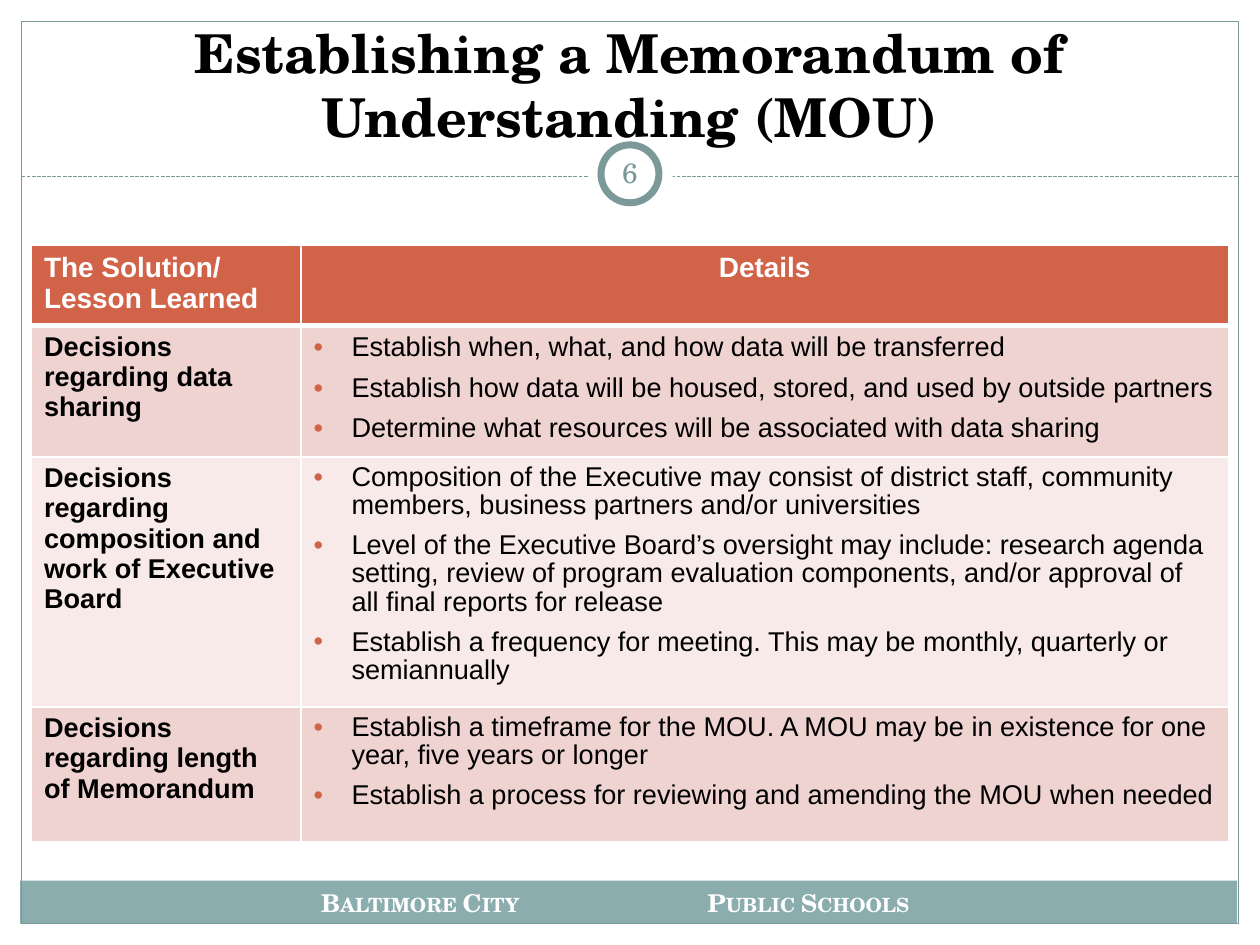
from lxml.etree import SubElement
from pptx import Presentation
from pptx.dml.color import RGBColor
from pptx.enum.dml import MSO_LINE
from pptx.enum.shapes import MSO_CONNECTOR, MSO_SHAPE
from pptx.enum.text import MSO_ANCHOR, PP_ALIGN
from pptx.oxml.ns import qn
from pptx.util import Inches, Pt

WHITE = RGBColor(0xFF, 0xFF, 0xFF)
BLACK = RGBColor(0, 0, 0)
TEAL = RGBColor(0x7C, 0x99, 0x9A)
NUMBER_TEAL = RGBColor(0x7B, 0x98, 0x99)
FOOTER_TEAL = RGBColor(0x8C, 0xAD, 0xAE)
ORANGE = RGBColor(0xD1, 0x63, 0x49)
PINK = RGBColor(0xEE, 0xD3, 0xD0)
PALE_PINK = RGBColor(0xF7, 0xEA, 0xE9)
SERIF = "TeX Gyre Schola"
SANS = "Arial"

TITLE = "Establishing a Memorandum of Understanding (MOU)"
PAGE_NUMBER = "6"
FOOTERS = [("Baltimore City", 2.42), ("Public Schools", 5.5)]
HEADERS = ["The Solution/ Lesson Learned", "Details"]
DECISIONS = [
    ("Decisions regarding data sharing", 1, [
        "Establish when, what, and how data will be transferred",
        "Establish how data will be housed, stored, and used by outside partners",
        "Determine what resources will be associated with data sharing",
    ]),
    ("Decisions regarding composition and work of Executive Board", 0.95, [
        "Composition of the Executive may consist of district staff, community members, "
        "business partners and/or universities",
        "Level of the Executive Board’s oversight may include: research agenda setting, "
        "review of program evaluation components, and/or approval of all final reports for release",
        "Establish a frequency for meeting. This may be monthly, quarterly or semiannually",
    ]),
    ("Decisions regarding length of Memorandum", 0.95, [
        "Establish a timeframe for the MOU. A MOU may be in existence for one year, "
        "five years or longer",
        "Establish a process for reviewing and amending the MOU when needed",
    ]),
]
COLUMN_WIDTHS = [2.14, 7.36]
ROW_HEIGHTS = [0.58, 0.99, 1.87, 1.07]


def add_panel(slide, kind, box, fill=None, line=None, width=0.75):
    shape = slide.shapes.add_shape(kind, *map(Inches, box))
    shape.shadow.inherit = False
    if fill is None:
        shape.fill.background()
    else:
        shape.fill.solid()
        shape.fill.fore_color.rgb = fill
    if line is None:
        shape.line.fill.background()
    else:
        shape.line.color.rgb = line
        shape.line.width = Pt(width)


def style(paragraph, name, size, color, bold):
    font = paragraph.font
    font.name, font.size, font.bold = name, Pt(size), bold
    font.color.rgb = color


def add_text(slide, text, box, size, color, bold=True, anchor=MSO_ANCHOR.MIDDLE, margin=0.1):
    frame = slide.shapes.add_textbox(*map(Inches, box)).text_frame
    frame.word_wrap = True
    frame.vertical_anchor = anchor
    frame.margin_left = frame.margin_right = Inches(margin)
    paragraph = frame.paragraphs[0]
    paragraph.alignment = PP_ALIGN.CENTER
    run = paragraph.add_run()
    run.text = text
    style(paragraph, SERIF, size, color, bold)
    return run


def add_bullet(paragraph):
    properties = paragraph._p.get_or_add_pPr()
    properties.set("marL", str(Inches(0.3)))
    properties.set("indent", str(Inches(-0.31)))
    color = SubElement(properties, qn("a:buClr"))
    SubElement(color, qn("a:srgbClr"), val=str(ORANGE))
    SubElement(properties, qn("a:buFont"), typeface=SANS)
    SubElement(properties, qn("a:buChar"), char="•")


def format_cell(cell, fill, bottom=1):
    properties = cell._tc.get_or_add_tcPr()
    for side, width in (("L", 1), ("R", 1), ("T", 1), ("B", bottom)):
        border = SubElement(properties, qn(f"a:ln{side}"), w=str(Pt(width)))
        solid = SubElement(border, qn("a:solidFill"))
        SubElement(solid, qn("a:srgbClr"), val=str(WHITE))
    cell.fill.solid()
    cell.fill.fore_color.rgb = fill


def add_frame(slide):
    add_panel(slide, MSO_SHAPE.RECTANGLE, (0.16, 6.99, 9.66, 0.34), FOOTER_TEAL)
    add_panel(slide, MSO_SHAPE.RECTANGLE, (0.17, 0.17, 9.66, 7.16), line=TEAL)
    divider = slide.shapes.add_connector(
        MSO_CONNECTOR.STRAIGHT, Inches(0.17), Inches(1.4), Inches(9.83), Inches(1.4))
    divider.line.color.rgb = TEAL
    divider.line.width = Pt(0.75)
    divider.line.dash_style = MSO_LINE.SQUARE_DOT
    SubElement(divider._element.spPr, qn("a:effectLst"))
    add_panel(slide, MSO_SHAPE.OVAL, (4.67, 1.05, 0.67, 0.67), WHITE)
    add_panel(slide, MSO_SHAPE.OVAL, (4.77, 1.15, 0.46, 0.46), WHITE, TEAL, 4)
    for text, left in FOOTERS:
        run = add_text(slide, text, (left, 7, 1.83, 0.29), 14, WHITE, anchor=MSO_ANCHOR.TOP)
        run._r.get_or_add_rPr().set("cap", "small")


def add_decision_table(slide):
    table = slide.shapes.add_table(
        len(ROW_HEIGHTS), len(COLUMN_WIDTHS), Inches(0.25), Inches(1.95),
        Inches(sum(COLUMN_WIDTHS)), Inches(sum(ROW_HEIGHTS))).table
    for column, width in zip(table.columns, COLUMN_WIDTHS):
        column.width = Inches(width)
    for row, height in zip(table.rows, ROW_HEIGHTS):
        row.height = Inches(height)

    for index, header in enumerate(HEADERS):
        cell = table.cell(0, index)
        format_cell(cell, ORANGE, bottom=3)
        cell.text = header
        paragraph = cell.text_frame.paragraphs[0]
        paragraph.alignment = PP_ALIGN.CENTER if index else PP_ALIGN.LEFT
        style(paragraph, SANS, 16, WHITE, True)

    for index, (topic, spacing, details) in enumerate(DECISIONS, 1):
        topic_cell, detail_cell = table.cell(index, 0), table.cell(index, 1)
        for cell in (topic_cell, detail_cell):
            format_cell(cell, PINK if index % 2 else PALE_PINK)
        topic_cell.text = topic
        style(topic_cell.text_frame.paragraphs[0], SANS, 15.5, BLACK, True)
        detail_cell.text = "\n".join(details)
        for position, paragraph in enumerate(detail_cell.text_frame.paragraphs):
            add_bullet(paragraph)
            paragraph.line_spacing = spacing
            if position:
                paragraph.space_before = Pt(6)
            style(paragraph, SANS, 15.5, BLACK, False)


def main():
    presentation = Presentation()
    presentation.slide_width, presentation.slide_height = Inches(10), Inches(7.5)
    slide = presentation.slides.add_slide(presentation.slide_layouts[6])
    add_frame(slide)
    add_text(slide, TITLE, (0.33, 0.25, 9.33, 0.83), 30.6, BLACK)
    add_text(slide, PAGE_NUMBER, (4.75, 1.13, 0.5, 0.48), 16, NUMBER_TEAL, False, margin=0.05)
    add_decision_table(slide)
    presentation.save("out.pptx")


if __name__ == "__main__":
    main()
